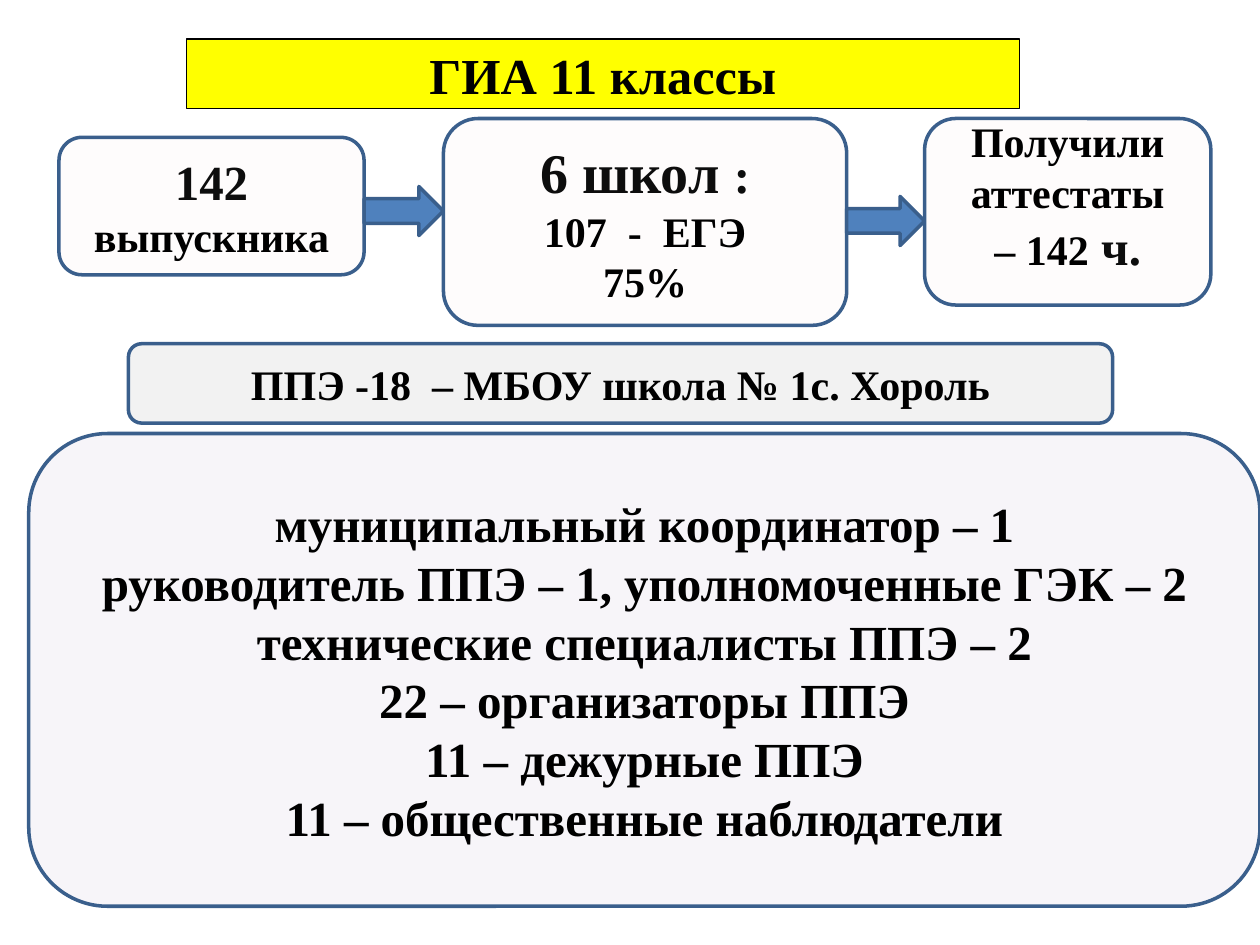
from dataclasses import dataclass

import pptx
import pptx.dml.color
import pptx.enum.shapes
import pptx.enum.text
import pptx.util

Cm = pptx.util.Cm
SHAPE = pptx.enum.shapes.MSO_SHAPE


@dataclass(frozen=True)
class Theme:
    """Colours, font and type sizes of the slide."""
    font: str = "Times New Roman"
    black: str = "000000"
    ink: str = "0D0D0D"
    edge: str = "3A5F8C"
    arrow: str = "4F81BD"
    yellow: str = "FFFF00"
    card: str = "FEFCFC"
    grey: str = "F2F2F2"
    lilac: str = "F7F5F9"
    title: float = 28.8
    big: float = 32
    large: float = 28
    body: float = 24
    thin: float = 0.75
    thick: float = 2


THEME = Theme()


def rgb(value):
    """Turn a hex string into a colour."""
    return pptx.dml.color.RGBColor.from_string(value)


def add_block(slide, kind, box, fill, line=THEME.edge, width=THEME.thick):
    """Add a filled, outlined shape in a box given in centimetres."""
    sp = slide.shapes.add_shape(kind, *(Cm(v) for v in box))
    sp.shadow.inherit = False
    sp.fill.solid()
    sp.fill.fore_color.rgb = rgb(fill)
    sp.line.color.rgb = rgb(line)
    sp.line.width = pptx.util.Pt(width)
    return sp


def write(sp, paragraphs):
    """Write centred bold paragraphs, each a list of (text, size, colour) runs."""
    tf = sp.text_frame
    tf.word_wrap = True
    tf.vertical_anchor = pptx.enum.text.MSO_ANCHOR.MIDDLE
    for i, runs in enumerate(paragraphs):
        p = tf.add_paragraph() if i else tf.paragraphs[0]
        p.alignment = pptx.enum.text.PP_ALIGN.CENTER
        for text, size, colour in runs:
            r = p.add_run()
            r.text = text
            r.font.name = THEME.font
            r.font.size = pptx.util.Pt(size)
            r.font.bold = True
            r.font.color.rgb = rgb(colour)


def add_title(slide, box):
    """Add the yellow title bar."""
    sp = add_block(slide, SHAPE.RECTANGLE, box, THEME.yellow, THEME.black, THEME.thin)
    write(sp, [[("ГИА 11 классы", THEME.title, THEME.black)]])


def add_flow(slide, box):
    """Add the three cards of the flow and the arrows between them."""
    left, top, width, height = box
    t = THEME
    graduates = (left, top + 0.38, 6.15, 2.77)
    schools = (left + 7.75, top, 8.13, height)
    certificates = (left + width - 5.77, top, 5.77, 3.76)
    cards = [
        (graduates, [[("142 ", t.large, t.ink), ("выпускника", t.body, t.black)]]),
        (schools, [[("6 школ ", t.big, t.ink), (":", t.large, t.ink)],
                   [("107  -  ЕГЭ", t.body, t.black)],
                   [("75%", t.body, t.black)]]),
        (certificates, [[("Получили аттестаты", t.body, t.black)],
                        [("– 142", t.body, t.black), (" ч.", t.large, t.ink)]]),
    ]
    for card, paragraphs in cards:
        sp = add_block(slide, SHAPE.ROUNDED_RECTANGLE, card, t.card)
        write(sp, paragraphs)
    sp.text_frame.margin_bottom = Cm(0.77)

    arrow_height = 0.99
    for start, end, drop in ((graduates, schools, 1.37), (schools, certificates, 1.57)):
        x = start[0] + start[2]
        add_block(slide, SHAPE.RIGHT_ARROW, (x, top + drop, end[0] - x, arrow_height), t.arrow)


def add_site(slide, box):
    """Add the grey bar naming the exam site."""
    sp = add_block(slide, SHAPE.ROUNDED_RECTANGLE, box, THEME.grey)
    write(sp, [[("ППЭ -18  – МБОУ школа № 1с. Хороль", THEME.body, THEME.black)]])


def add_staff(slide, box):
    """Add the large panel listing the exam staff."""
    lines = [
        "муниципальный координатор – 1",
        "руководитель ППЭ – 1, уполномоченные ГЭК – 2",
        "технические специалисты ППЭ – 2",
        "22 – организаторы ППЭ",
        "11 – дежурные ППЭ",
        "11 – общественные наблюдатели",
    ]
    sp = add_block(slide, SHAPE.ROUNDED_RECTANGLE, box, THEME.lilac)
    write(sp, [[(line, THEME.large, THEME.black)] for line in lines])
    for p in sp.text_frame.paragraphs[1:3]:
        pPr = p._p.get_or_add_pPr()
        pPr.set("marL", str(Cm(1.27)))
        pPr.set("indent", str(-Cm(1.27)))


def main():
    """Build the slide and save it."""
    prs = pptx.Presentation()
    prs.slide_width, prs.slide_height = Cm(25.4), Cm(19.05)
    slide = prs.slides.add_slide(prs.slide_layouts[6])
    add_title(slide, (3.76, 0.79, 16.79, 1.4))
    add_flow(slide, (1.19, 2.39, 23.22, 4.17))
    add_site(slide, (2.59, 6.93, 19.84, 1.6))
    add_staff(slide, (0.58, 8.74, 24.82, 9.53))
    prs.save("out.pptx")


if __name__ == "__main__":
    main()
